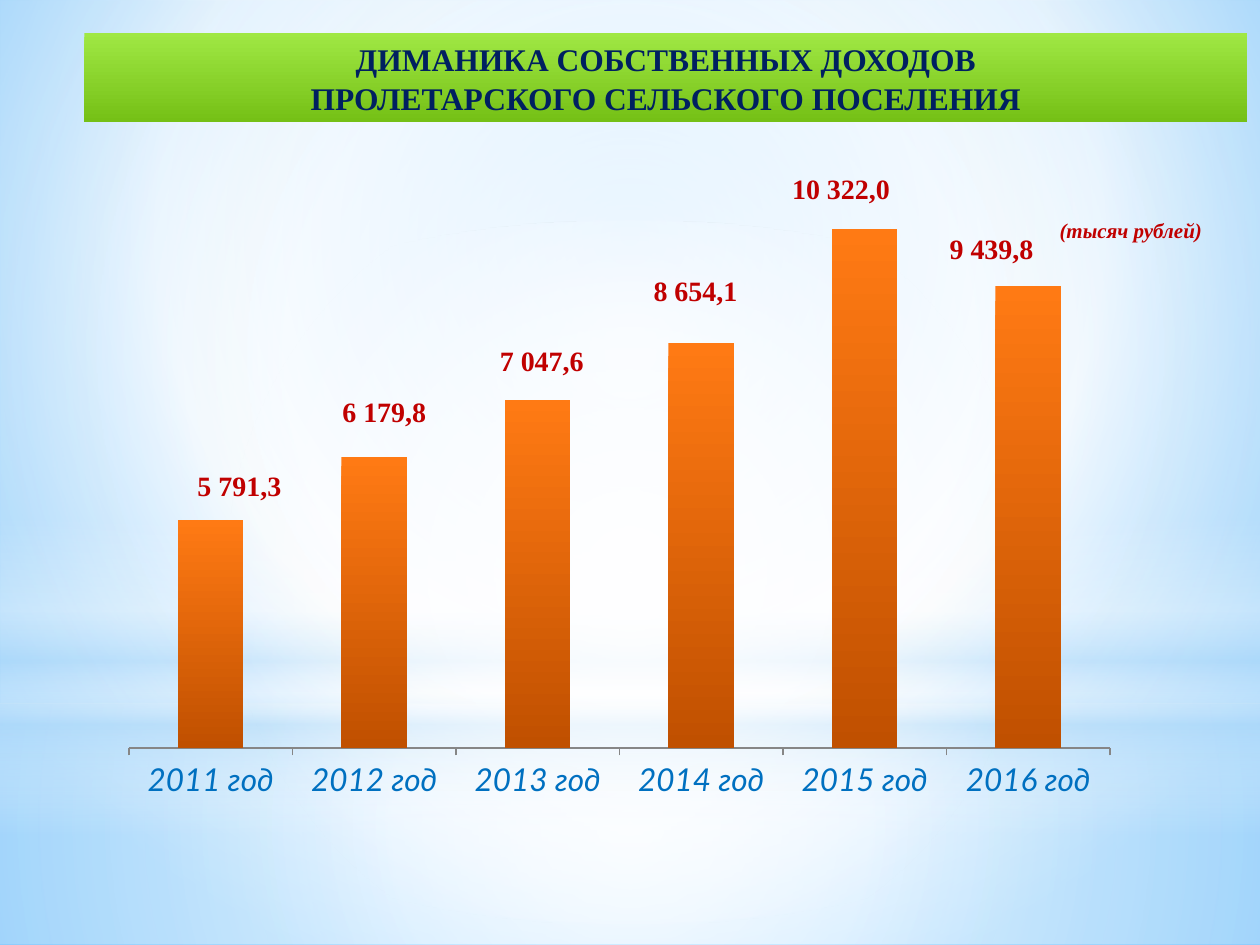
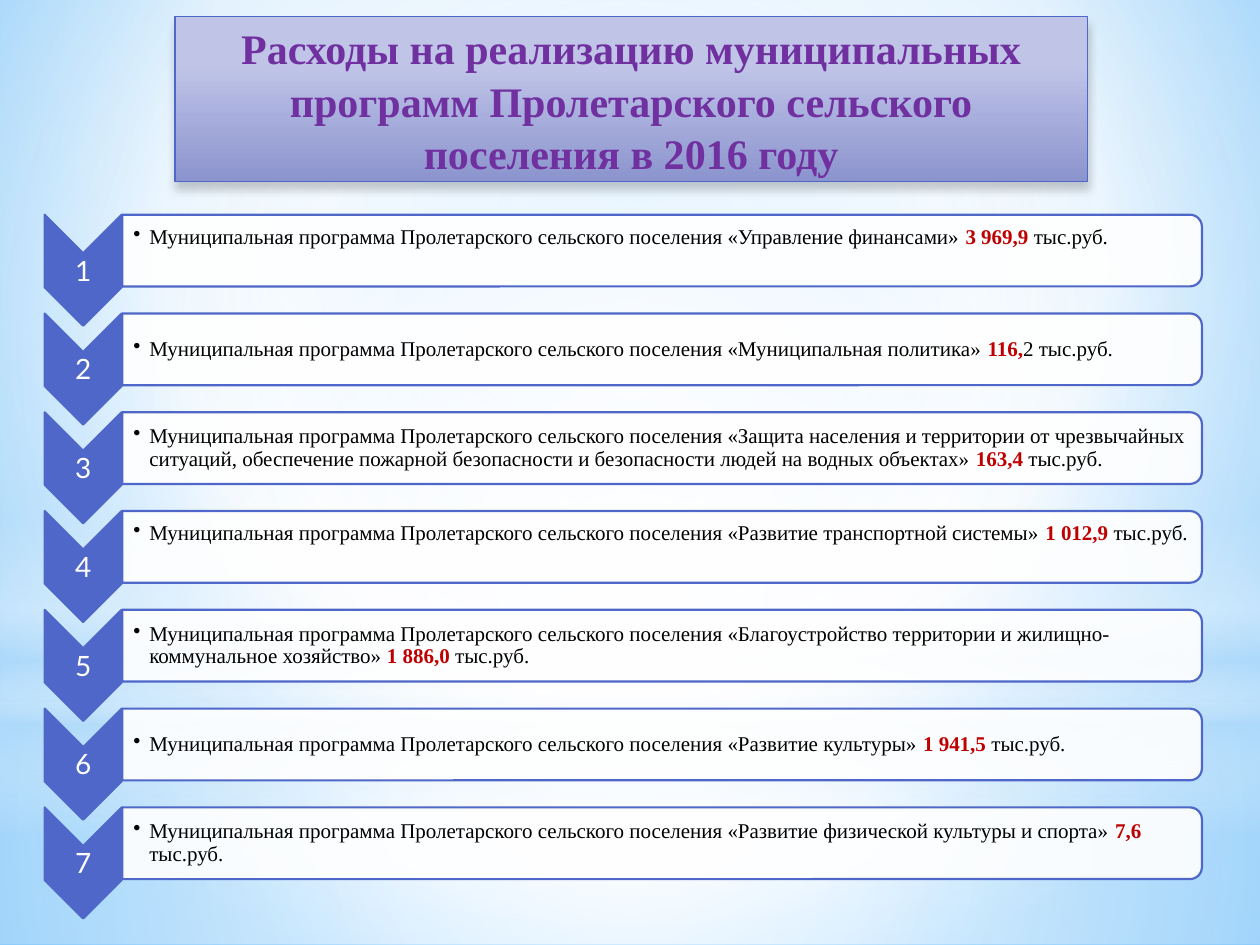
from pptx import Presentation
from pptx.chart.data import CategoryChartData
from pptx.dml.color import RGBColor
from pptx.enum.chart import XL_CHART_TYPE, XL_TICK_LABEL_POSITION, XL_TICK_MARK
from pptx.enum.shapes import MSO_SHAPE
from pptx.enum.text import MSO_ANCHOR, MSO_AUTO_SIZE, PP_ALIGN
from pptx.oxml import parse_xml
from pptx.oxml.ns import nsdecls
from pptx.util import Pt

# Content
YEARS = ["2011 год", "2012 год", "2013 год", "2014 год", "2015 год", "2016 год"]
LEVELS = [44, 56, 67, 78, 100, 89]
INCOME = [  # text, centre, top
    ("5 791,3", 136.8, 264.2), ("6 179,8", 219.6, 221.8),
    ("7 047,6", 309.6, 193), ("8 654,1", 397.4, 152.6),
    ("10 322,0", 480.6, 94.3), ("9 439,8", 566.6, 128.9),
]
UNIT = "(тысяч рублей)"
HEADS = [
    "ДИМАНИКА СОБСТВЕННЫХ ДОХОДОВ\nПРОЛЕТАРСКОГО СЕЛЬСКОГО ПОСЕЛЕНИЯ",
    "Расходы на реализацию муниципальных программ "
    "Пролетарского сельского поселения в 2016 году",
]
LEAD = "Муниципальная программа Пролетарского сельского поселения «{}» "
PLANS = [  # name, red part, tail, lift of the text
    ("Управление финансами", "3 969,9 ", "тыс.руб.", 15),
    ("Муниципальная политика", "116,", "2 тыс.руб.", 0),
    ("Защита населения и территории от чрезвычайных ситуаций, обеспечение "
     "пожарной безопасности и безопасности людей на водных объектах",
     "163,4 ", "тыс.руб.", 0),
    ("Развитие транспортной системы", "1 012,9 ", "тыс.руб.", 15),
    ("Благоустройство территории и жилищно- коммунальное хозяйство",
     "1 886,0 ", "тыс.руб.", 0),
    ("Развитие культуры", "1 941,5 ", "тыс.руб.", 0),
    ("Развитие физической культуры и спорта", "7,6 ", "тыс.руб.", 0),
]

# Style
SERIF, SANS = "Times New Roman", "Lato"
HEX = {
    "white": "FFFFFF", "black": "000000", "sky": "9ED5FF", "deep": "5BB9FF",
    "mist": "B4DCFA", "blue": "4E67C8", "year": "0070C0", "red": "C00000",
    "navy": "002060", "plum": "7030A0", "lime": "A0E844", "leaf": "75C016",
    "lilac": "C0C5E8", "iris": "8C94CE", "flame": "FF7A14", "rust": "C05000",
    "grey": "868686",
}
MID = (50, 50, 50, 50)
SCENE = [  # shape, box, stops (place, colour, opacity), focus
    (MSO_SHAPE.RECTANGLE, (0, 402, 720, 138),
     [(0, "white", 91), (37, "white", 76), (100, "mist", 79)], MID),
    (MSO_SHAPE.RECTANGLE, (0, 0, 720, 402),
     [(0, "white", 89), (48, "white", 62), (100, "mist", 79)], MID),
    (MSO_SHAPE.RECTANGLE, (0, 296.6, 720, 180),
     [(0, "white", 0), (29, "white", 30), (45, "mist", 40),
      (55, "white", 26), (65, "mist", 60), (100, "white", 0)], None),
    (MSO_SHAPE.OVAL, (0, 126, 720, 402),
     [(0, "white", 100), (56, "white", 0)], MID),
]
SKY = [(0, "sky", 100), (60, "white", 100), (100, "deep", 100)]


def tone(name):
    return RGBColor.from_string(HEX[name])


def style(font, size, color, bold=False, italic=False, face=SERIF):
    font.name, font.size, font.bold, font.italic = face, Pt(size), bold, italic
    font.color.rgb = tone(color)


def blend(root, stops, focus):
    """Swap the first solid fill under root for a gradient."""
    marks = "".join(
        f'<a:gs pos="{place * 1000}"><a:srgbClr val="{HEX[color]}">'
        f'<a:alpha val="{alpha * 1000}"/></a:srgbClr></a:gs>'
        for place, color, alpha in stops)
    way = '<a:lin ang="5400000" scaled="0"/>'
    if focus:
        rect = " ".join(f'{side}="{n * 1000}"' for side, n in zip("ltrb", focus))
        way = f'<a:path path="circle"><a:fillToRect {rect}/></a:path>'
    old = root.xpath(".//a:solidFill")[0]
    old.getparent().replace(old, parse_xml(
        f'<a:gradFill {nsdecls("a")} rotWithShape="1">'
        f'<a:gsLst>{marks}</a:gsLst>{way}</a:gradFill>'))


def shade(fill, top, end, start=0):
    """Two colours running from top to bottom."""
    fill.gradient()
    fill.gradient_angle = 270
    for stop, color, place in zip(fill.gradient_stops, (top, end), (start, 1)):
        stop.color.rgb, stop.position = tone(color), place


def draw(slide, kind, box, turn=False):
    """Add a shape that covers box, lying on its side when turn is set."""
    x, y, w, h = box
    if turn:
        x, y, w, h = x + (w - h) / 2, y + (h - w) / 2, h, w
    shape = slide.shapes.add_shape(kind, Pt(x), Pt(y), Pt(w), Pt(h))
    shape.rotation = 90 if turn else 0
    shape.shadow.inherit = False
    shape.fill.solid()
    return shape


def write(slide, box, text="", inset=(7.2, 3.6, 7.2, 3.6), wrap=True):
    area = slide.shapes.add_textbox(*map(Pt, box))
    frame = area.text_frame
    frame.word_wrap, frame.auto_size = wrap, MSO_AUTO_SIZE.NONE
    frame.margin_left, frame.margin_top, frame.margin_right, frame.margin_bottom = map(Pt, inset)
    frame.text = text
    frame.paragraphs[0].alignment = PP_ALIGN.CENTER
    return frame


def label(slide, text, mid, top, size, wide, high, italic=False):
    frame = write(slide, (mid - wide / 2, top, wide, high), text, wrap=False)
    style(frame.paragraphs[0].runs[0].font, size, "red", True, italic)


def head(slide, text, box, size, color, *ramp):
    title = slide.shapes.title
    title.left, title.top, title.width, title.height = map(Pt, box)
    shade(title.fill, *ramp)
    frame = title.text_frame
    frame.text = text
    frame.auto_size, frame.vertical_anchor = MSO_AUTO_SIZE.NONE, MSO_ANCHOR.MIDDLE
    for para in frame.paragraphs:
        para.alignment, para.line_spacing = PP_ALIGN.CENTER, 1.05
        for run in para.runs:
            style(run.font, size, color, True)
    return title


def dress(layout, slide):
    """Give the layout its sky, so that every slide shows it."""
    layout.background.fill.solid()
    blend(layout.element, SKY, (20, 10, 20, 60))
    tree = layout.element.cSld.spTree
    for spot, (kind, box, stops, focus) in enumerate(SCENE, 2):
        shape = draw(slide, kind, box)
        shape.line.fill.background()
        blend(shape.element, stops, focus)
        tree.insert(spot, shape.element)


def graph(slide):
    data = CategoryChartData()
    data.categories = YEARS
    data.add_series("Series 1", LEVELS)
    chart = slide.shapes.add_chart(XL_CHART_TYPE.COLUMN_STACKED, Pt(62), Pt(90),
                                   Pt(584), Pt(375), data).chart
    chart.has_title = chart.has_legend = False
    style(chart.font, 18, "black", face=SANS)
    plot = chart.plots[0]
    plot.gap_width, plot.overlap, plot.vary_by_categories = 150, 100, False
    shade(plot.series[0].format.fill, "flame", "rust")
    # Axes
    rise, base = chart.value_axis, chart.category_axis
    rise.minimum_scale, rise.maximum_scale = 0, 110
    rise.has_major_gridlines = rise.visible = False
    base.major_tick_mark = XL_TICK_MARK.OUTSIDE
    base.tick_label_position = XL_TICK_LABEL_POSITION.LOW
    base.format.line.color.rgb = tone("grey")
    style(base.tick_labels.font, 18, "year", italic=True, face=SANS)
    # Place of the plot inside the chart
    area = chart.element.xpath(".//c:plotArea")[0]
    for old in area.xpath("./c:layout"):
        area.remove(old)
    spots = "".join(f'<c:{key} val="{val}"/>' for key, val in
                    (("x", .02), ("y", .03), ("w", .96), ("h", .87)))
    area.insert(0, parse_xml(
        f'<c:layout {nsdecls("c")}><c:manualLayout><c:layoutTarget val="inner"/>'
        f'<c:xMode val="edge"/><c:yMode val="edge"/>{spots}'
        f'</c:manualLayout></c:layout>'))


def row(slide, num, top, name, total, tail, lift):
    # Numbered chevron
    arrow = draw(slide, MSO_SHAPE.CHEVRON, (25.5, top, 44, 63.4), True)
    arrow.fill.fore_color.rgb = tone("blue")
    # Rounded bar
    bar = draw(slide, MSO_SHAPE.ROUND_2_SAME_RECTANGLE, (69.8, top, 617, 41), True)
    bar.fill.fore_color.rgb = tone("white")
    bar.element.xpath(".//a:srgbClr")[0].append(
        parse_xml(f'<a:alpha {nsdecls("a")} val="90000"/>'))
    for shape in (arrow, bar):
        shape.line.color.rgb, shape.line.width = tone("blue"), Pt(1.25)
    mark = write(slide, (25.5, top + 22, 44, 19), str(num), (1, 1, 1, 1))
    mark.vertical_anchor = MSO_ANCHOR.MIDDLE
    style(mark.paragraphs[0].runs[0].font, 16, "white", face=SANS)
    # Bulleted line
    frame = write(slide, (69.8, top + 2, 615.6, 37), inset=(6.5, 1, 1, 1 + lift))
    frame.vertical_anchor = MSO_ANCHOR.MIDDLE
    para = frame.paragraphs[0]
    para.alignment, para.line_spacing = PP_ALIGN.LEFT, .9
    props = para._p.get_or_add_pPr()
    props.set("marL", str(Pt(9)))
    props.set("indent", str(-Pt(9)))
    props.append(parse_xml(f'<a:buChar {nsdecls("a")} char="•"/>'))
    parts = ((LEAD.format(name), "black"), (total, "red"), (tail, "black"))
    for text, color in parts:
        run = para.add_run()
        run.text = text
        style(run.font, 12, color, color == "red")


def main():
    deck = Presentation()
    deck.slide_width, deck.slide_height = Pt(720), Pt(540)
    layout = deck.slide_layouts[5]
    first, second = (deck.slides.add_slide(layout) for _ in HEADS)
    dress(layout, first)

    # Income chart
    head(first, HEADS[0], (48.2, 18.7, 664.6, 51), 18, "navy", "lime", "leaf")
    graph(first)
    for text, mid, top in INCOME:
        label(first, text, mid, top, 16, 8 * len(text) + 7.5, 26.6)
    label(first, UNIT, 646.2, 121, 12, 97, 21.6, True)

    # Spending list
    title = head(second, HEADS[1], (100, 9.4, 521.3, 94.3), 24, "plum",
                 "lilac", "iris", .28)
    title.line.color.rgb, title.line.width = tone("blue"), Pt(.75)
    title.element.spPr.append(parse_xml(
        f'<a:effectLst {nsdecls("a")}><a:outerShdw blurRad="{Pt(5)}" dist="{Pt(4)}" '
        f'dir="5400000" rotWithShape="0"><a:srgbClr val="{HEX["black"]}">'
        f'<a:alpha val="20000"/></a:srgbClr></a:outerShdw></a:effectLst>'))
    for num, plan in enumerate(PLANS, 1):
        row(second, num, 122.7 + 56.45 * (num - 1), *plan)

    deck.save("out.pptx")


if __name__ == "__main__":
    main()
